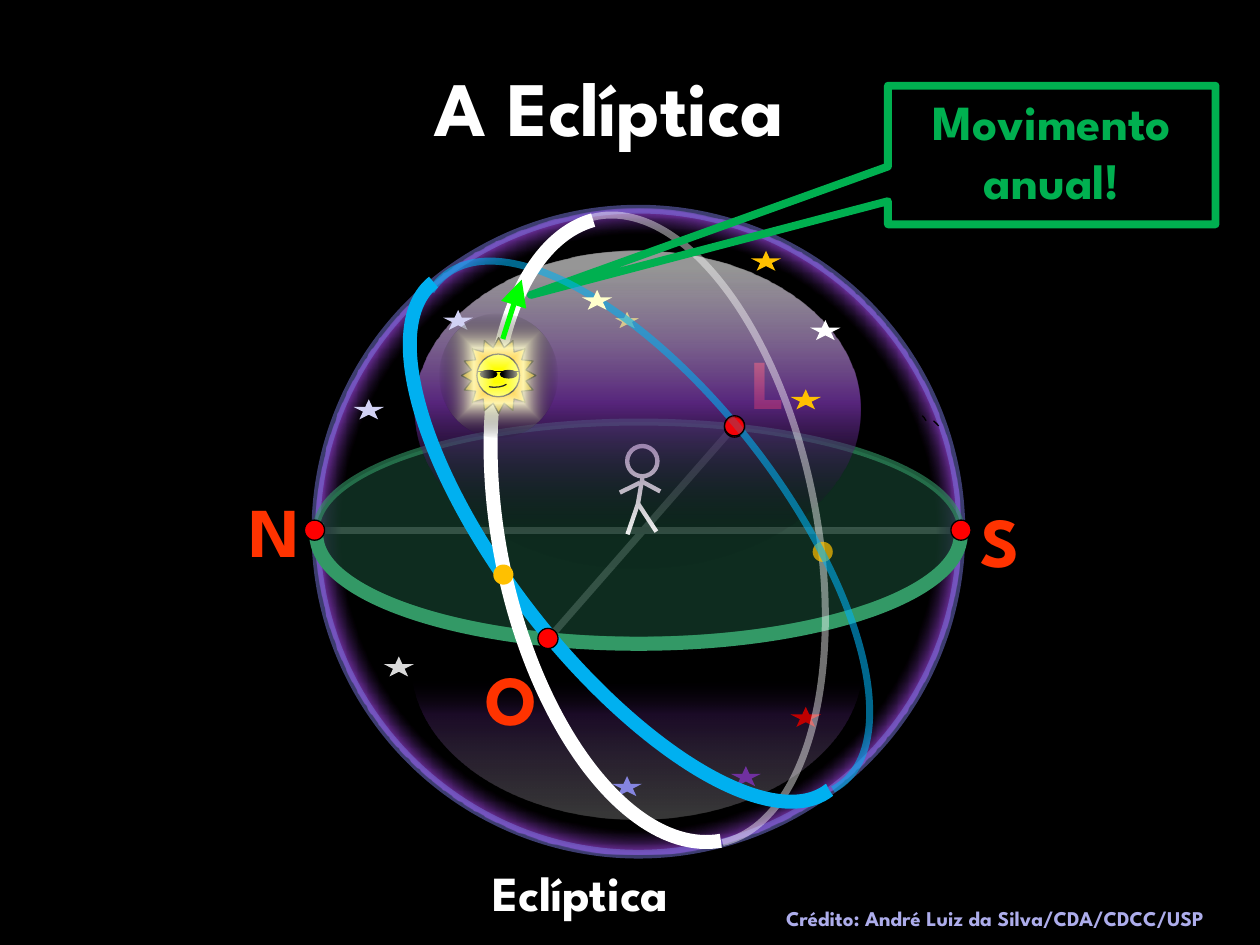
"""Builds the slide on the ecliptic: celestial sphere, horizon, equator and the Sun's yearly motion."""
from lxml import etree
from pptx import Presentation
from pptx.dml.color import RGBColor
from pptx.enum.shapes import MSO_CONNECTOR, MSO_SHAPE
from pptx.enum.text import MSO_ANCHOR, PP_ALIGN
from pptx.oxml.ns import qn
from pptx.util import Pt

STRAIGHT = MSO_CONNECTOR.STRAIGHT
ELLIPSE, ARC, MOON = MSO_SHAPE.OVAL, MSO_SHAPE.ARC, MSO_SHAPE.MOON
STAR, SUN_RAYS = MSO_SHAPE.STAR_5_POINT, MSO_SHAPE.STAR_16_POINT
CALLOUT = MSO_SHAPE.RECTANGULAR_CALLOUT
LEFT, CENTER = PP_ALIGN.LEFT, PP_ALIGN.CENTER
TOP, MIDDLE = MSO_ANCHOR.TOP, MSO_ANCHOR.MIDDLE

FONT = "League Spartan"
BLACK, WHITE = RGBColor(0, 0, 0), RGBColor(255, 255, 255)
RED, ORANGE_RED = RGBColor(0xFF, 0, 0), RGBColor(0xFF, 0x33, 0)
YELLOW, CREAM = RGBColor(0xFF, 0xFF, 0), RGBColor(0xFF, 0xFF, 0xCC)
GOLD, CRIMSON = RGBColor(0xFF, 0xC0, 0), RGBColor(0xC0, 0, 0)
PURPLE, PERIWINKLE = RGBColor(0x70, 0x30, 0xA0), RGBColor(0x78, 0x78, 0xDE)
LAVENDER, PALE_BLUE = RGBColor(0x85, 0x85, 0xE0), RGBColor(0xD2, 0xD2, 0xF4)
LILAC, GREY = RGBColor(0xAD, 0xAD, 0xEB), RGBColor(0xD9, 0xD9, 0xD9)
DARK_GREEN, SEA_GREEN = RGBColor(0x14, 0x3C, 0x2B), RGBColor(0x33, 0x99, 0x66)
GREEN, LIME = RGBColor(0, 0xB0, 0x50), RGBColor(0, 0xFF, 0)
SKY = RGBColor(0, 0xB0, 0xF0)

TITLE = ("A Eclíptica", (42.5, 15.6, 612, 90))
CALLOUT_TEXT = ("Movimento anual!", (507.4, 49, 187.2, 79.2))
ECLIPTIC_LABEL = ("Eclíptica", (195.6, 489.6, 272.2, 41))
CREDIT = ("Crédito: André Luiz da Silva/CDA/CDCC/USP", (442.1, 514.1, 277.9, 21.6))
SKY_CARDINALS = [("N", 135.4, 275), ("L", 422.6, 190.3), ("S", 553, 280.8)]
WEST = ("O", 270.4, 371.2)
LETTER_SIZE = (28.1, 55.4)

SPHERE = (180.5, 119.5, 368.6, 368.6)
DOME = (236.9, 143.3, 254.9, 181.4)
LOWER_SKY = (319.7, 295.2, 88.6, 257.8)
SKY_GLOW = [(3, WHITE, 37), (68, PURPLE, 41), (94, BLACK, 0)]
SPHERE_GLOW = [(65, BLACK, 40), (70, PURPLE, 100)]
DOME_GLOW = [(6, WHITE, 58), (48, PURPLE, 77), (91, BLACK, 2)]
SUN_GLOW = [(7, WHITE, 0), (42, CREAM, 85), (100, BLACK, 2)]
CARDINAL_AXES = [((310.3, 368.6), (419.8, 243.4)), ((180.7, 303.1), (548.6, 303.1))]
OBSERVER_HEAD = (358.4, 254.9, 17.3, 17.3)
OBSERVER_LIMBS = [
    ((367.2, 272.2), (364.3, 289.4)), ((364.3, 287.3), (375.1, 303.8)),
    ((364.3, 288.7), (358.6, 305.3)), ((366.5, 275), (377.3, 280.8)),
    ((354.2, 281.5), (365.8, 275.8)),
]
HIDDEN_STAR = (349.7, 177.1)
STARS = [
    (202.1, 228.2, PALE_BLUE), (253.2, 177.1, PALE_BLUE), (451.8, 222.5, GOLD),
    (429.1, 143.3, GOLD), (463, 182.9, WHITE), (417.6, 437.8, PURPLE),
    (451.8, 403.9, CRIMSON), (349.7, 443.5, LAVENDER), (219.3, 375.1, GREY),
]
FRONT_STAR = (332.6, 165.6)
HORIZON_DOTS = [(174, 297.2), (414, 238.3), (543.4, 297.2)]
HORIZON = [
    (549.1, 303.1), (548.6, 268.6), (465.8, 241.2), (365, 241.2),
    (262.8, 241.2), (180.7, 269.3), (180.7, 303.1),
    (180.7, 337.7), (262.8, 365.8), (365, 365.8),
    (466.6, 365.8), (549.1, 337.7), (549.1, 303.1),
]
FRONT_HORIZON = [
    (181.2, 298.8), (180.7, 301), (180.7, 303.1), (180.7, 305.3),
    (180.7, 339.8), (262.8, 367.9), (365, 367.9),
    (466.6, 367.9), (549.1, 339.8), (549.1, 305.3),
    (549.1, 304.6), (548.9, 303.8), (548.6, 303.1),
]
TICKS = [
    [(536.4, 243.4), (535.7, 242.6), (535, 241.9), (533.5, 240.5)],
    [(529.2, 240.5), (528.5, 239), (527.8, 238.3), (527, 237.6)],
]
SMILE = [(279.4, 221), (283.7, 221.8), (287.3, 221), (289.4, 219.6)]

prs = Presentation()
prs.slide_width, prs.slide_height = Pt(720), Pt(540)
slide = prs.slides.add_slide(prs.slide_layouts[5])
slide.background.fill.solid()
slide.background.fill.fore_color.rgb = BLACK


def set_alpha(color_holder, percent):
    if percent < 100:
        color = color_holder.find(".//" + qn("a:srgbClr"))
        etree.SubElement(color, qn("a:alpha")).set("val", str(percent * 1000))


def set_gradient(shape, stops, angle=None, spread="circle"):
    shape.fill.background()
    gradient = etree.Element(qn("a:gradFill"), rotWithShape="1")
    stop_list = etree.SubElement(gradient, qn("a:gsLst"))
    for position, color, alpha in stops:
        stop = etree.SubElement(stop_list, qn("a:gs"), pos=str(position * 1000))
        etree.SubElement(stop, qn("a:srgbClr"), val=str(color))
        set_alpha(stop, alpha)
    if angle is None:
        radial = etree.SubElement(gradient, qn("a:path"), path=spread)
        etree.SubElement(radial, qn("a:fillToRect"), l="50000", t="50000", r="50000", b="50000")
    else:
        etree.SubElement(gradient, qn("a:lin"), ang=str(angle * 60000), scaled="1")
    properties = shape._element.spPr
    properties.replace(properties.find(qn("a:noFill")), gradient)


def paint(shape, fill=None, alpha=100, line=None, weight=0.75, line_alpha=100):
    shape.shadow.inherit = False
    if fill is None:
        shape.fill.background()
    else:
        shape.fill.solid()
        shape.fill.fore_color.rgb = fill
        set_alpha(shape._element.spPr.find(qn("a:solidFill")), alpha)
    if line is None:
        shape.line.fill.background()
    else:
        shape.line.color.rgb = line
        shape.line.width = Pt(weight)
        set_alpha(shape._element.spPr.find(qn("a:ln")), line_alpha)
    return shape


def add_preset(preset, box, rotation=0, adjust=(), **look):
    shape = slide.shapes.add_shape(preset, *map(Pt, box))
    shape.rotation = rotation
    for index, value in enumerate(adjust):
        shape.adjustments[index] = value
    return paint(shape, **look)


def add_curve(points, **look):
    fine = [(x * 100, y * 100) for x, y in points]
    builder = slide.shapes.build_freeform(*fine[0], scale=Pt(1) / 100)
    builder.add_line_segments(fine[1:], close=False)
    shape = builder.convert_to_shape()
    segments = list(shape._element.spPr.iter(qn("a:lnTo")))
    for first in range(0, len(segments), 3):
        bezier = etree.Element(qn("a:cubicBezTo"))
        segments[first].addprevious(bezier)
        for segment in segments[first:first + 3]:
            bezier.append(segment[0])
            segment.getparent().remove(segment)
    return paint(shape, **look)


def add_line(start, end, color, weight, arrow=False):
    connector = slide.shapes.add_connector(STRAIGHT, *map(Pt, start + end))
    connector.line.color.rgb = color
    connector.line.width = Pt(weight)
    properties = connector._element.spPr
    if arrow:
        etree.SubElement(properties.find(qn("a:ln")), qn("a:tailEnd"),
                         type="triangle", w="lg", len="lg")
    etree.SubElement(properties, qn("a:effectLst"))


def add_star(left, top, color, **look):
    add_preset(STAR, (left, top, 17.3, 11.5), fill=color, **look)


def add_dot(left, top, color, **look):
    add_preset(ELLIPSE, (left, top, 11.5, 11.5), fill=color, **look)


def write(text, box=None, holder=None, size=28, color=WHITE, align=LEFT, anchor=TOP):
    holder = holder or slide.shapes.add_textbox(*map(Pt, box))
    if box:
        holder.left, holder.top, holder.width, holder.height = map(Pt, box)
    frame = holder.text_frame
    frame.word_wrap, frame.vertical_anchor = True, anchor
    frame.text = text
    paragraph = frame.paragraphs[0]
    paragraph.alignment = align
    font = paragraph.runs[0].font
    font.name, font.size, font.bold, font.color.rgb = FONT, Pt(size), True, color


def write_cardinal(letter, left, top):
    write(letter, (left, top, *LETTER_SIZE), size=40, color=ORANGE_RED)


write(*TITLE, holder=slide.shapes.title, size=44, align=CENTER, anchor=MIDDLE)

set_gradient(add_preset(MOON, LOWER_SKY, 270, [0.875]), SKY_GLOW, angle=0)
for start, end in CARDINAL_AXES:
    add_line(start, end, WHITE, 4)
set_gradient(add_preset(ELLIPSE, SPHERE, line=PERIWINKLE, weight=5, line_alpha=50), SPHERE_GLOW)
for cardinal in SKY_CARDINALS:
    write_cardinal(*cardinal)
add_curve(HORIZON, fill=DARK_GREEN, alpha=73, line=SEA_GREEN, weight=4, line_alpha=60)
add_curve(FRONT_HORIZON, fill=DARK_GREEN, alpha=7, line=SEA_GREEN, weight=8)
for tick in TICKS:
    add_curve(tick, line=BLACK)

add_star(*HIDDEN_STAR, YELLOW, line=BLACK)
add_preset(ELLIPSE, OBSERVER_HEAD, line=WHITE, weight=2.5)
for start, end in OBSERVER_LIMBS:
    add_line(start, end, WHITE, 2.5)
for dot in HORIZON_DOTS:
    add_dot(*dot, RED, line=BLACK)
set_gradient(add_preset(ELLIPSE, DOME), DOME_GLOW, angle=90)
for star in STARS:
    add_star(*star)

write(*ECLIPTIC_LABEL, align=CENTER)
add_preset(ARC, (285.8, 120.2, 180.7, 365), 168.8, [53.46, 161.75],
           line=WHITE, weight=4, line_alpha=44)
callout_text, callout_box = CALLOUT_TEXT
callout = add_preset(CALLOUT, callout_box, adjust=[-1.59, 1.01], line=GREEN, weight=4.5)
write(callout_text, holder=callout, color=GREEN, align=CENTER)
write(*CREDIT, size=12, color=LILAC)
add_dot(464.4, 309.6, GOLD, alpha=70)
add_dot(414, 238.3, RED, alpha=70, line=BLACK)
add_preset(ARC, (289.4, 118.1, 157, 368.6), 142.1, [51.69, 163.14],
           line=SKY, weight=4, line_alpha=58)
add_preset(ARC, (288.4, 122.4, 144.7, 367.9), 142.1, [161.99, 54], line=SKY, weight=8)
add_preset(ARC, (285.1, 121.5, 185, 362.2), 168.8, [162.18, 53.31], line=WHITE, weight=8)

add_preset(SUN_RAYS, (263.7, 193, 42.5, 43.2), adjust=[0.375], fill=GOLD, line=BLACK)
add_preset(ELLIPSE, (272.5, 202.3, 24.5, 24.5), fill=YELLOW, line=BLACK)
add_curve(SMILE, line=BLACK)
for lens_left in (274.5, 286):
    add_preset(ELLIPSE, (lens_left, 211.7, 9.4, 4.3), fill=BLACK, line=BLACK)
add_line((272.4, 212.4), (297.4, 212.4), BLACK, 0.75)
set_gradient(add_preset(ELLIPSE, (251.1, 179.3, 67.7, 70.6)), SUN_GLOW, spread="shape")

write_cardinal(*WEST)
add_line((287.3, 193.7), (298.1, 159.8), LIME, 3, arrow=True)
add_dot(307.4, 359.1, RED, line=BLACK)
add_dot(281.9, 322.6, GOLD)
add_star(*FRONT_STAR, CREAM)
add_dot(414, 237.6, RED, alpha=64, line=BLACK)

prs.save("out.pptx")
